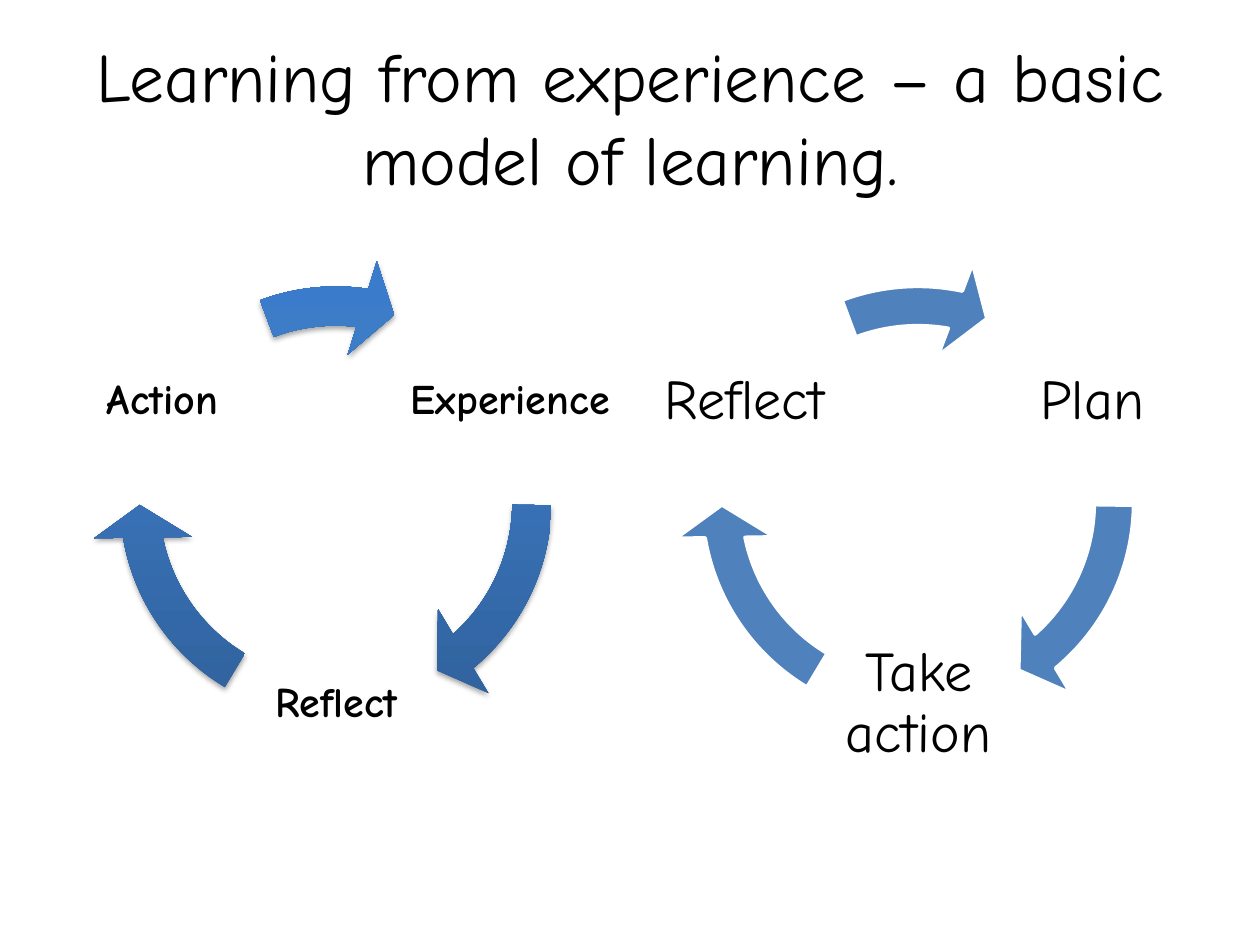
from copy import deepcopy

from lxml.etree import SubElement
from pptx import Presentation
from pptx.dml.color import RGBColor
from pptx.enum.shapes import MSO_SHAPE as Shape
from pptx.enum.text import MSO_ANCHOR as Anchor, PP_ALIGN as Align
from pptx.oxml.ns import qn
from pptx.util import Inches, Pt

FONT = "Comic Neue"
TITLE = "Learning from experience – a basic model of learning."
CYCLES = [
    {"left": 0.72, "size": 24, "bold": True, "inset": 0.03,
     "steps": [("Experience", 1.82), ("Reflect", 1.65), ("Action", 1.65)],
     "gradient": [(0, "2F5F99"), (0.8, "3D7CC7"), (1, "3A7CCB")],
     "last_arrow_end": 166.65},
    {"left": 5.34, "size": 32, "bold": False, "inset": 0.04,
     "steps": [("Plan", 1.65), ("Take action", 1.65), ("Reflect", 1.65)],
     "solid": "4F81BD", "last_arrow_end": 168.6},
]
RING_TOP, RING_SIZE = 2.04, 3.89
STEP_HEIGHT = 1.65
STEP_PLACES = [(3.33, 2.36), (1.95, 4.76), (0.57, 2.36)]
ARROW_ANGLES = [(29.67, 0.5), (101.75, 72.58), (None, 149.65)]


def rgb(value):
    return RGBColor.from_string(value)


def add_label(shapes, text, box, size, bold=False, inset=None, spacing=None):
    label = shapes.add_textbox(*map(Inches, box))
    frame = label.text_frame
    frame.word_wrap = True
    frame.vertical_anchor = Anchor.MIDDLE
    if inset is not None:
        frame.margin_left = frame.margin_right = Inches(inset)
        frame.margin_top = frame.margin_bottom = Inches(inset)
    paragraph = frame.paragraphs[0]
    paragraph.text = text
    paragraph.alignment = Align.CENTER
    if spacing:
        paragraph.line_spacing = spacing
    font = paragraph.font
    font.name, font.size, font.bold = FONT, Pt(size), bold
    font.color.rgb = rgb("000000")


def fill_gradient(fill, colours):
    fill.gradient()
    fill.gradient_angle = 90
    last_stop = fill.gradient_stops[1]._gs
    last_stop.addnext(deepcopy(last_stop))
    for stop, (position, colour) in zip(fill.gradient_stops, colours):
        stop.position = position
        stop.color.rgb = rgb(colour)


def add_shadow(arrow):
    effects = arrow._element.spPr.find(qn("a:effectLst"))
    shadow = SubElement(effects, qn("a:outerShdw"), blurRad=str(Pt(3.1)),
                        dist=str(Pt(1.8)), dir="5400000", rotWithShape="0")
    colour = SubElement(shadow, qn("a:srgbClr"), val="000000")
    SubElement(colour, qn("a:alpha"), val="35000")


def add_arrow(shapes, cycle, end, start):
    arrow = shapes.add_shape(Shape.CIRCULAR_ARROW, Inches(cycle["left"]), Inches(RING_TOP),
                             Inches(RING_SIZE), Inches(RING_SIZE))
    for index, value in enumerate((0.08, 5.75, end, start, 0.1)):
        arrow.adjustments[index] = value
    arrow.shadow.inherit = False
    if "gradient" in cycle:
        fill_gradient(arrow.fill, cycle["gradient"])
        arrow.line.fill.background()
        add_shadow(arrow)
    else:
        arrow.fill.solid()
        arrow.fill.fore_color.rgb = rgb(cycle["solid"])
        arrow.line.color.rgb = rgb("FFFFFF")
        arrow.line.width = Pt(2)


def add_cycle(slide, cycle):
    shapes = slide.shapes.add_group_shape().shapes
    for (text, width), (centre, top), (end, start) in zip(cycle["steps"], STEP_PLACES, ARROW_ANGLES):
        box = (cycle["left"] + centre - width / 2, top, width, STEP_HEIGHT)
        add_label(shapes, text, box, cycle["size"], cycle["bold"], cycle["inset"], 0.9)
        add_arrow(shapes, cycle, end or cycle["last_arrow_end"], start)


def main():
    deck = Presentation()
    deck.slide_width, deck.slide_height = Inches(10), Inches(7.5)
    slide = deck.slides.add_slide(deck.slide_layouts[6])
    add_label(slide.shapes, TITLE, (0.5, 0.3, 9, 1.25), 39.6)
    for cycle in CYCLES:
        add_cycle(slide, cycle)
    deck.save("out.pptx")


if __name__ == "__main__":
    main()
